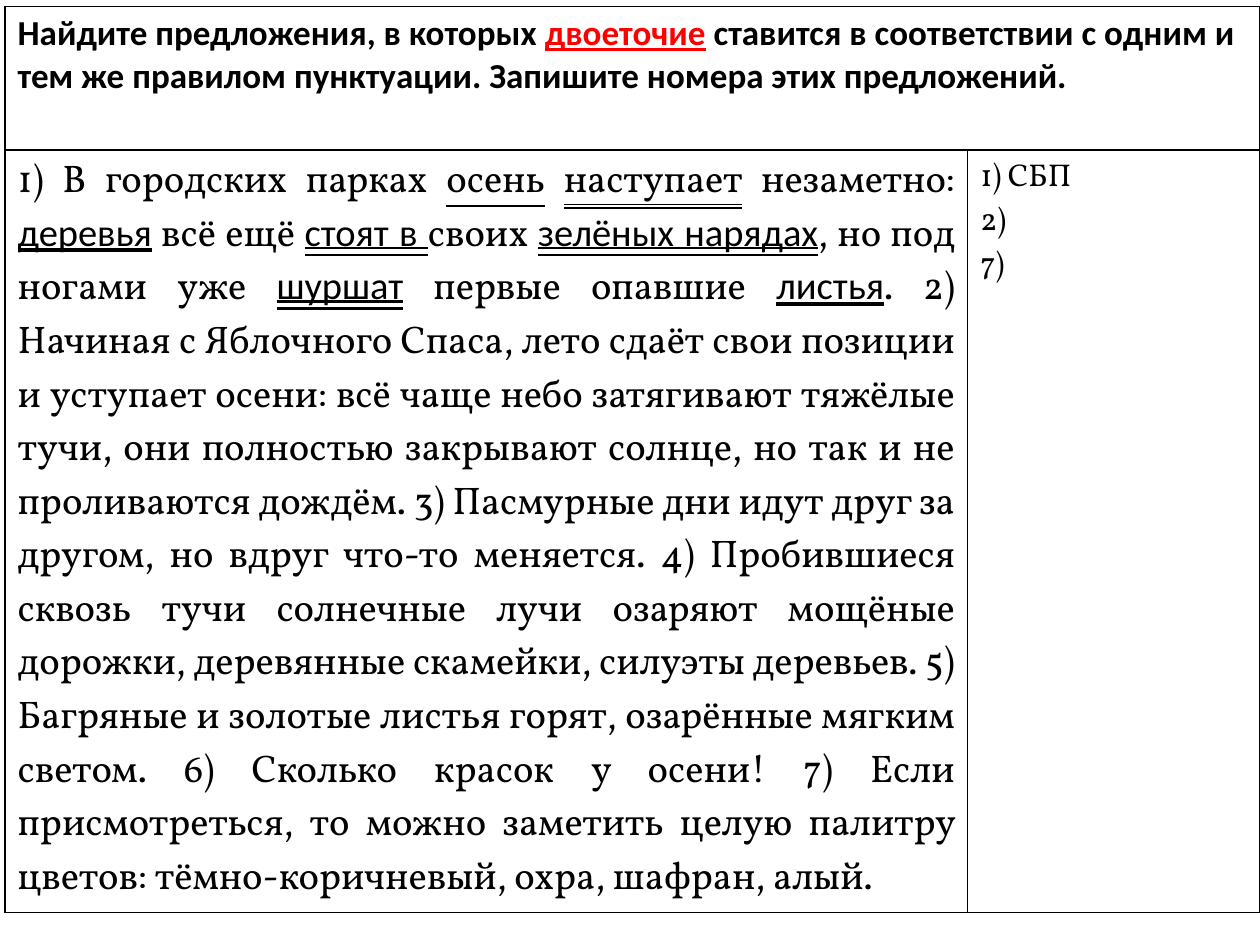
from lxml.etree import SubElement
from pptx import Presentation
from pptx.dml.color import RGBColor
from pptx.enum.text import MSO_UNDERLINE, PP_ALIGN
from pptx.oxml.ns import qn
from pptx.util import Inches, Pt

SINGLE = MSO_UNDERLINE.SINGLE_LINE
DOUBLE = MSO_UNDERLINE.DOUBLE_LINE
SANS = "Calibri"
SERIF = "Vollkorn"
BLACK = "000000"
RED = "FF0000"

# Each run: text, then optional underline, font and colour
TASK = [
    ("Найдите предложения, в которых ",),
    ("двоеточие", SINGLE, None, RED),
    (" ставится в соответствии с одним и тем же правилом пунктуации. "
     "Запишите номера этих предложений.",),
]
SENTENCES = [
    ("1) В городских парках ",),
    ("осень", SINGLE),
    (" ",),
    ("наступает", DOUBLE),
    (" незаметно: ",),
    ("деревья", SINGLE, SANS),
    (" всё ещё ",),
    ("стоят в ", DOUBLE, SANS),
    ("своих ",),
    ("зелёных нарядах", DOUBLE, SANS),
    (", но под ногами уже ",),
    ("шуршат", DOUBLE, SANS),
    (" первые опавшие ",),
    ("листья", SINGLE, SANS),
    (". 2) Начиная с Яблочного Спаса, лето сдаёт свои позиции и уступает осени: "
     "всё чаще небо затягивают тяжёлые тучи, они полностью закрывают солнце, "
     "но так и не проливаются дождём. 3) Пасмурные дни идут друг за другом, "
     "но вдруг что-то меняется. 4) Пробившиеся сквозь тучи солнечные лучи озаряют "
     "мощёные дорожки, деревянные скамейки, силуэты деревьев. 5) Багряные и золотые "
     "листья горят, озарённые мягким светом. 6) Сколько красок у осени! "
     "7) Если присмотреться, то можно заметить целую палитру цветов: "
     "тёмно-коричневый, охра, шафран, алый.",),
]
ANSWERS = [[("1) СБП",)], [("2)",)], [("7)",)]]


def color(value):
    return RGBColor.from_string(value)


class SlideBuilder:
    def __init__(self, slide, border_color=BLACK, border_width=1):
        self.slide = slide
        self.border_color = border_color
        self.border_width = border_width

    def table(self, left, top, columns, rows):
        frame = self.slide.shapes.add_table(
            len(rows), len(columns), Inches(left), Inches(top),
            Inches(sum(columns)), Inches(sum(rows)))
        table = frame.table
        table.first_row = table.horz_banding = False
        for column, width in zip(table.columns, columns):
            column.width = Inches(width)
        for row, height in zip(table.rows, rows):
            row.height = Inches(height)
        for cell in table.iter_cells():
            self.borders(cell)
            cell.fill.background()
        return table

    def borders(self, cell):
        properties = cell._tc.get_or_add_tcPr()
        for side in ("a:lnL", "a:lnR", "a:lnT", "a:lnB"):
            line = SubElement(properties, qn(side), w=str(Pt(self.border_width)))
            fill = SubElement(line, qn("a:solidFill"))
            SubElement(fill, qn("a:srgbClr"), val=self.border_color)

    def text(self, cell, paragraphs, font, size, bold=False, align=PP_ALIGN.LEFT):
        frame = cell.text_frame
        for index, runs in enumerate(paragraphs):
            paragraph = frame.add_paragraph() if index else frame.paragraphs[0]
            paragraph.alignment = align
            paragraph.font.size = Pt(size)
            paragraph.font.bold = bold
            for run in runs:
                self.run(paragraph, font, *run)

    def run(self, paragraph, base_font, text, underline=None, font=None, fill=BLACK):
        run = paragraph.add_run()
        run.text = text
        run.font.name = font or base_font
        run.font.underline = underline
        run.font.color.rgb = color(fill)


def main():
    presentation = Presentation()
    presentation.slide_width = Inches(10)
    presentation.slide_height = Inches(7.5)
    slide = presentation.slides.add_slide(presentation.slide_layouts[6])

    builder = SlideBuilder(slide)
    table = builder.table(0.04, 0.05, columns=[7.64, 2.32], rows=[1.14, 5.8])
    table.cell(0, 0).merge(table.cell(0, 1))
    builder.text(table.cell(0, 0), [TASK], SANS, 20, bold=True)
    builder.text(table.cell(1, 0), [SENTENCES], SERIF, 22, align=PP_ALIGN.JUSTIFY)
    builder.text(table.cell(1, 1), ANSWERS, SERIF, 18)

    presentation.save("out.pptx")


if __name__ == "__main__":
    main()
